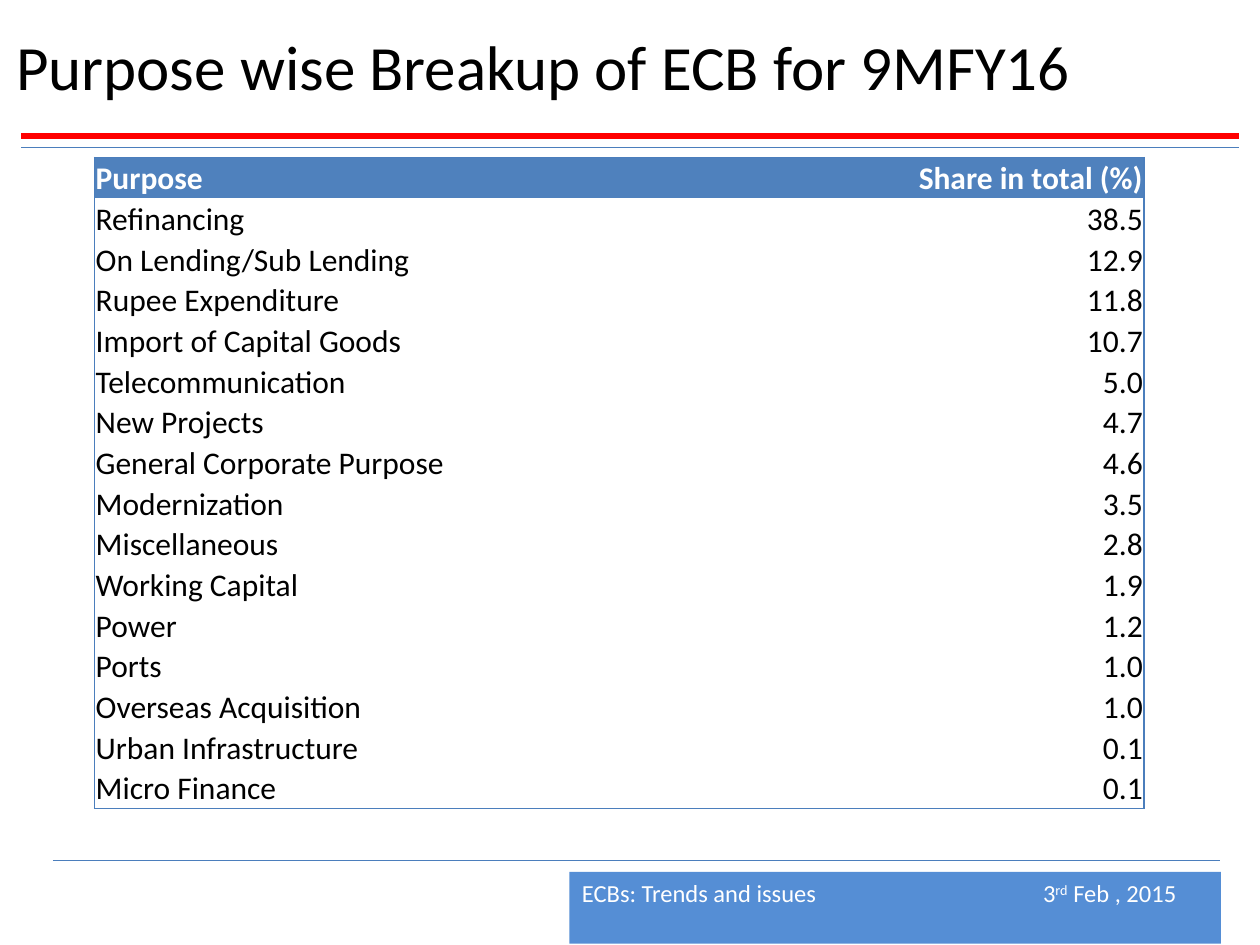
from lxml.etree import SubElement
from pptx import Presentation
from pptx.dml.color import RGBColor
from pptx.enum.shapes import MSO_CONNECTOR, MSO_SHAPE
from pptx.enum.text import MSO_ANCHOR as Anchor, PP_ALIGN as Align
from pptx.oxml import parse_xml
from pptx.oxml.ns import nsdecls, qn
from pptx.util import Inches, Pt

COLORS = {
    "red": "FF0000",
    "rule": "4B7EBC",
    "header": "4F81BD",
    "footer": "558ED5",
    "white": "FFFFFF",
    "black": "000000",
}
NO_GRID_STYLE = "{2D5ABB26-0587-4C30-8999-92F81FD0307C}"
SHARES = [
    ("Purpose", "Share in total (%)"),
    ("Refinancing", "38.5"),
    ("On Lending/Sub Lending", "12.9"),
    ("Rupee Expenditure", "11.8"),
    ("Import of Capital Goods", "10.7"),
    ("Telecommunication", "5.0"),
    ("New Projects", "4.7"),
    ("General Corporate Purpose", "4.6"),
    ("Modernization", "3.5"),
    ("Miscellaneous", "2.8"),
    ("Working Capital", "1.9"),
    ("Power", "1.2"),
    ("Ports", "1.0"),
    ("Overseas Acquisition", "1.0"),
    ("Urban Infrastructure", "0.1"),
    ("Micro Finance", "0.1"),
]


def rgb(color):
    return RGBColor.from_string(COLORS[color])


class SlideBuilder:
    font = "Calibri"

    def __init__(self, slide):
        self.slide = slide

    def run(self, paragraph, text, size, color, bold=False, baseline=None):
        run = paragraph.add_run()
        run.text = text
        run.font.name = self.font
        run.font.size = Pt(size)
        run.font.bold = bold
        run.font.color.rgb = rgb(color)
        if baseline:
            run.font._element.set("baseline", str(baseline * 1000))

    def rule(self, left, right, y, color, width):
        rule = self.slide.shapes.add_connector(
            MSO_CONNECTOR.STRAIGHT, Inches(left), Inches(y), Inches(right), Inches(y))
        rule.line.color.rgb = rgb(color)
        rule.line.width = Pt(width)
        SubElement(rule._element.spPr, qn("a:effectLst"))

    def title(self, text, left, top, width, height):
        title = self.slide.shapes.add_textbox(
            Inches(left), Inches(top), Inches(width), Inches(height))
        title.line.color.rgb = rgb("white")
        title.line.width = Pt(0.75)
        frame = title.text_frame
        frame.word_wrap = True
        frame.vertical_anchor = Anchor.MIDDLE
        self.run(frame.paragraphs[0], text, 36, "black")

    def footer(self, topic, date_parts, left, top, width, height, date_tab):
        footer = self.slide.shapes.add_shape(
            MSO_SHAPE.RECTANGLE, Inches(left), Inches(top), Inches(width), Inches(height))
        footer.shadow.inherit = False
        footer.fill.solid()
        footer.fill.fore_color.rgb = rgb("footer")
        footer.line.fill.background()
        frame = footer.text_frame
        frame.word_wrap = True
        frame.vertical_anchor = Anchor.TOP
        paragraph = frame.paragraphs[0]
        paragraph.alignment = Align.LEFT
        tabs = SubElement(paragraph._p.get_or_add_pPr(), qn("a:tabLst"))
        SubElement(tabs, qn("a:tab"), pos=str(Inches(date_tab)), algn="l")
        self.run(paragraph, topic + "\t", 14, "white")
        for text, baseline in date_parts:
            self.run(paragraph, text, 14, "white", baseline=baseline)

    def borders(self, cell, sides):
        properties = cell._tc.get_or_add_tcPr()
        for position, side in enumerate(sides):
            properties.insert(position, parse_xml(
                f'<a:ln{side} {nsdecls("a")} w="{Pt(0.75)}"><a:solidFill>'
                f'<a:srgbClr val="{COLORS["rule"]}"/></a:solidFill></a:ln{side}>'))

    def cell(self, cell, text, align, is_header):
        cell.margin_left = cell.margin_right = cell.margin_top = Inches(0.01)
        cell.margin_bottom = 0
        cell.vertical_anchor = Anchor.BOTTOM
        if is_header:
            cell.fill.solid()
            cell.fill.fore_color.rgb = rgb("header")
        else:
            cell.fill.background()
        paragraph = cell.text_frame.paragraphs[0]
        paragraph.alignment = align
        self.run(paragraph, text, 18, "white" if is_header else "black", is_header)

    def table(self, rows, left, top, height, column_widths):
        frame = self.slide.shapes.add_table(
            len(rows), len(column_widths), Inches(left), Inches(top),
            Inches(sum(column_widths)), Inches(height))
        table = frame.table
        table._tbl.tblPr.find(qn("a:tableStyleId")).text = NO_GRID_STYLE
        table.horz_banding = False
        for column, width in zip(table.columns, column_widths):
            column.width = Inches(width)
        last = len(rows) - 1
        for index, values in enumerate(rows):
            table.rows[index].height = Inches(height / len(rows))
            edge = ("T" if index == 0 else "") + ("B" if index == last else "")
            for column, (text, side, align) in enumerate(
                    zip(values, "LR", (Align.LEFT, Align.RIGHT))):
                cell = table.cell(index, column)
                self.cell(cell, text, align, index == 0)
                self.borders(cell, side + edge)


def main():
    deck = Presentation()
    deck.slide_width, deck.slide_height = Inches(10), Inches(7.5)
    builder = SlideBuilder(deck.slides.add_slide(deck.slide_layouts[6]))
    builder.rule(0.17, 9.83, 1.08, "red", 3)
    builder.rule(0.17, 9.83, 1.17, "rule", 0.75)
    builder.footer("ECBs: Trends and issues",
                   [("3", None), ("rd", 30), (" Feb , 2015", None)],
                   4.52, 6.92, 5.17, 0.57, date_tab=3.66)
    builder.rule(0.42, 9.68, 6.83, "rule", 0.75)
    builder.title("Purpose wise Breakup of ECB for 9MFY16", 0.03, 0.03, 9.97, 0.97)
    builder.table(SHARES, 0.75, 1.25, 5.17, (6.47, 1.86))
    deck.save("out.pptx")


if __name__ == "__main__":
    main()
